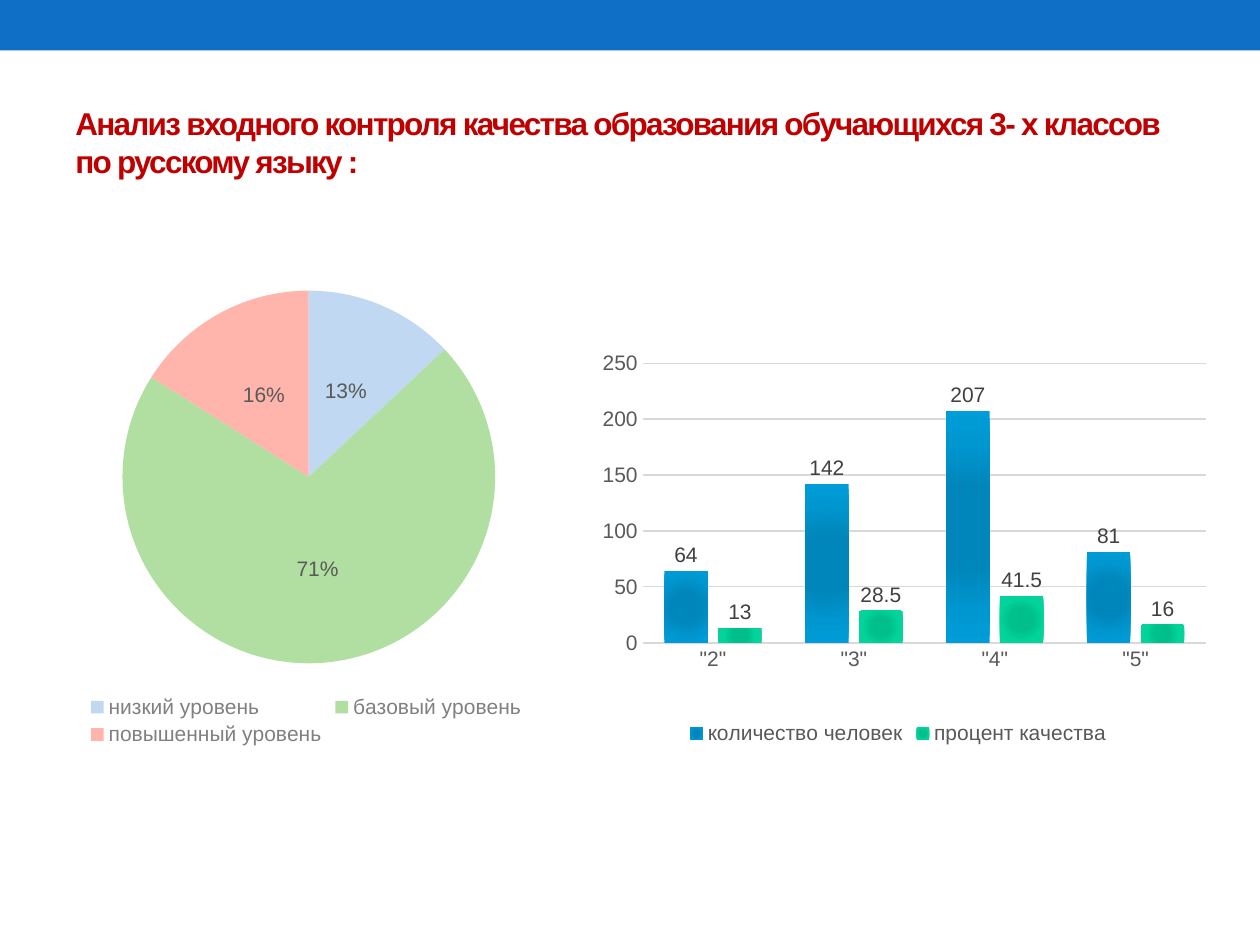
from dataclasses import dataclass
from lxml import etree
from pptx import Presentation
from pptx.chart.data import CategoryChartData
from pptx.dml.color import RGBColor as RGB
from pptx.enum.chart import XL_CHART_TYPE as CT, XL_LABEL_POSITION as LP
from pptx.enum.chart import XL_LEGEND_POSITION as LEG, XL_TICK_MARK as TM
from pptx.enum.shapes import MSO_SHAPE as SH
from pptx.enum.text import MSO_ANCHOR as ANC
from pptx.oxml import parse_xml
from pptx.oxml.ns import nsdecls, qn
from pptx.util import Pt


@dataclass(frozen=True)
class Theme:
    font: str = "Arial"
    title_size: int = 18
    chart_size: int = 12
    band: str = "0F6FC6"
    title: str = "C00000"
    text: str = "595959"
    value: str = "404040"
    pie_legend: str = "808080"
    grid: str = "D9D9D9"
    levels: tuple = ("C1D8F2", "B0DFA1", "FFB5AB")
    people: tuple = ("0086BA", "0086BA", "0096CF", "009DD9")
    quality: tuple = ("00BF8B", "00BF8B", "00D59B", "10CF9B")


T = Theme()
STOPS = (0, 34, 70, 100)


def style_font(font, size, color, bold=False):
    font.name, font.size, font.bold = T.font, Pt(size), bold
    font.color.rgb = RGB.from_string(color)


def add_band(s, x, y, w, h):
    sp = s.shapes.add_shape(SH.RECTANGLE, Pt(x), Pt(y), Pt(w), Pt(h))
    sp.shadow.inherit = False
    sp.fill.solid()
    sp.fill.fore_color.rgb = RGB.from_string(T.band)
    sp.line.fill.background()


def add_title(s, text, x, y, w, h):
    tf = s.shapes.add_textbox(Pt(x), Pt(y), Pt(w), Pt(h)).text_frame
    tf.word_wrap = True
    tf.vertical_anchor = ANC.MIDDLE
    r = tf.paragraphs[0].add_run()
    r.text = text
    style_font(r.font, T.title_size, T.title, bold=True)
    r.font._element.set("spc", "-100")


def set_plot_layout(chart, x, y, w, h):
    area = chart._chartSpace.chart.plotArea
    for old in area.findall(qn("c:layout")):
        area.remove(old)
    layout = parse_xml(f"<c:layout {nsdecls('c')}><c:manualLayout/></c:layout>")
    values = {"layoutTarget": "inner", "xMode": "edge", "yMode": "edge",
              "x": x, "y": y, "w": w, "h": h}
    for tag, value in values.items():
        etree.SubElement(layout[0], qn(f"c:{tag}")).set("val", str(value))
    area.insert(0, layout)


def set_radial_fill(series, colors):
    stops = "".join(
        f'<a:gs pos="{pos * 1000}"><a:srgbClr val="{color}"/></a:gs>'
        for pos, color in zip(STOPS, colors))
    edges = " ".join(f'{side}="100000"' for side in "ltrb")
    series._element.get_or_add_spPr().insert(0, parse_xml(
        f'<a:gradFill {nsdecls("a")} rotWithShape="1"><a:gsLst>{stops}</a:gsLst>'
        f'<a:path path="circle"><a:fillToRect {edges}/></a:path></a:gradFill>'))


def add_chart(s, kind, cats, series, box, plot_box, legend_color):
    data = CategoryChartData()
    data.categories = cats
    for name, values in series:
        data.add_series(name, values)
    chart = s.shapes.add_chart(kind, *map(Pt, box), data).chart
    chart.has_title = False
    style_font(chart.font, T.chart_size, T.text)
    chart.has_legend = True
    chart.legend.position = LEG.BOTTOM
    chart.legend.include_in_layout = False
    style_font(chart.legend.font, T.chart_size, legend_color)
    set_plot_layout(chart, *plot_box)
    return chart


def add_labels(plot, color, position):
    plot.has_data_labels = True
    labels = plot.data_labels
    labels.position = position
    style_font(labels.font, T.chart_size, color)
    return labels


def style_line(line, width):
    line.color.rgb = RGB.from_string(T.grid)
    line.width = Pt(width)


def add_grade_columns(s):
    series = [("количество человек", (64, 142, 207, 81)),
              ("процент качества", (13, 28.5, 41.5, 16))]
    chart = add_chart(s, CT.COLUMN_CLUSTERED, ['"2"', '"3"', '"4"', '"5"'], series,
                      (326, 193.5, 374.5, 235), (0.11, 0.06, 0.86, 0.68), T.text)
    plot = chart.plots[0]
    plot.vary_by_categories = False
    plot.gap_width, plot.overlap = 100, -24
    add_labels(plot, T.value, LP.OUTSIDE_END).show_value = True
    for ser, colors in zip(plot.series, (T.people, T.quality)):
        set_radial_fill(ser, colors)
    for axis in (chart.category_axis, chart.value_axis):
        axis.major_tick_mark = axis.minor_tick_mark = TM.NONE
        style_font(axis.tick_labels.font, T.chart_size, T.text)
    style_line(chart.category_axis.format.line, 1)
    axis = chart.value_axis
    axis.minimum_scale, axis.maximum_scale, axis.major_unit = 0, 250, 50
    axis.format.line.fill.background()
    style_line(axis.major_gridlines.format.line, 0.75)


def add_level_pie(s):
    cats = ["низкий уровень", "базовый уровень", "повышенный уровень"]
    chart = add_chart(s, CT.PIE, cats, [("Уровни", (13, 71, 16))],
                      (25, 157, 300, 272), (0.15, 0.03, 0.71, 0.79), T.pie_legend)
    plot = chart.plots[0]
    plot.vary_by_categories = True
    labels = add_labels(plot, T.text, LP.CENTER)
    labels.show_value, labels.show_percentage = False, True
    labels.number_format, labels.number_format_is_linked = "0%", False
    for i, color in enumerate(T.levels):
        fill = plot.series[0].points[i].format.fill
        fill.solid()
        fill.fore_color.rgb = RGB.from_string(color)


def main():
    prs = Presentation()
    prs.slide_width, prs.slide_height = Pt(720), Pt(540)
    s = prs.slides.add_slide(prs.slide_layouts[6])
    add_band(s, 0, 0, 720, 28.8)
    add_title(s, "Анализ входного контроля качества образования обучающихся "
              "3- х классов по русскому языку :", 36, 42, 648, 78)
    add_grade_columns(s)
    add_level_pie(s)
    prs.save("out.pptx")


if __name__ == "__main__":
    main()
